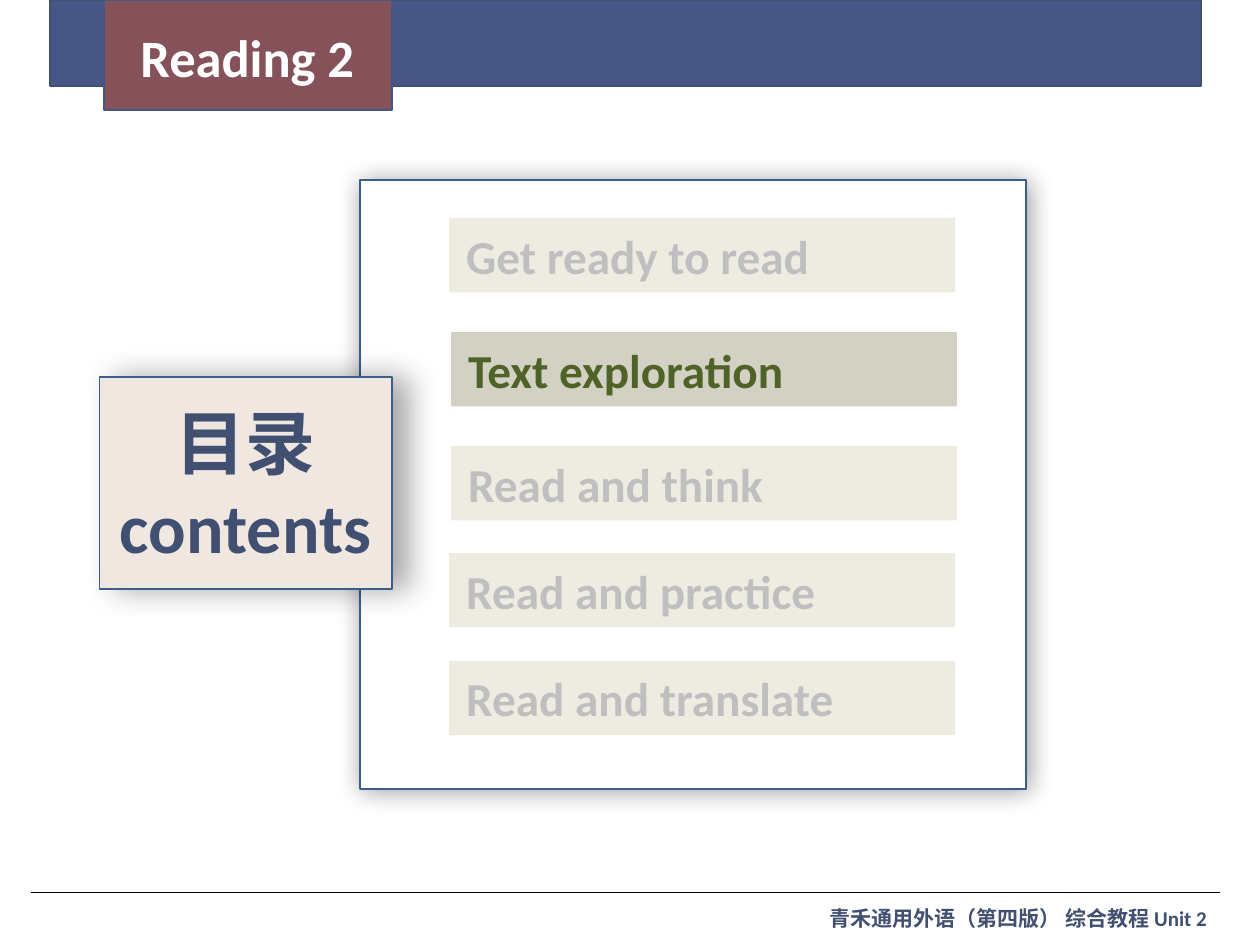
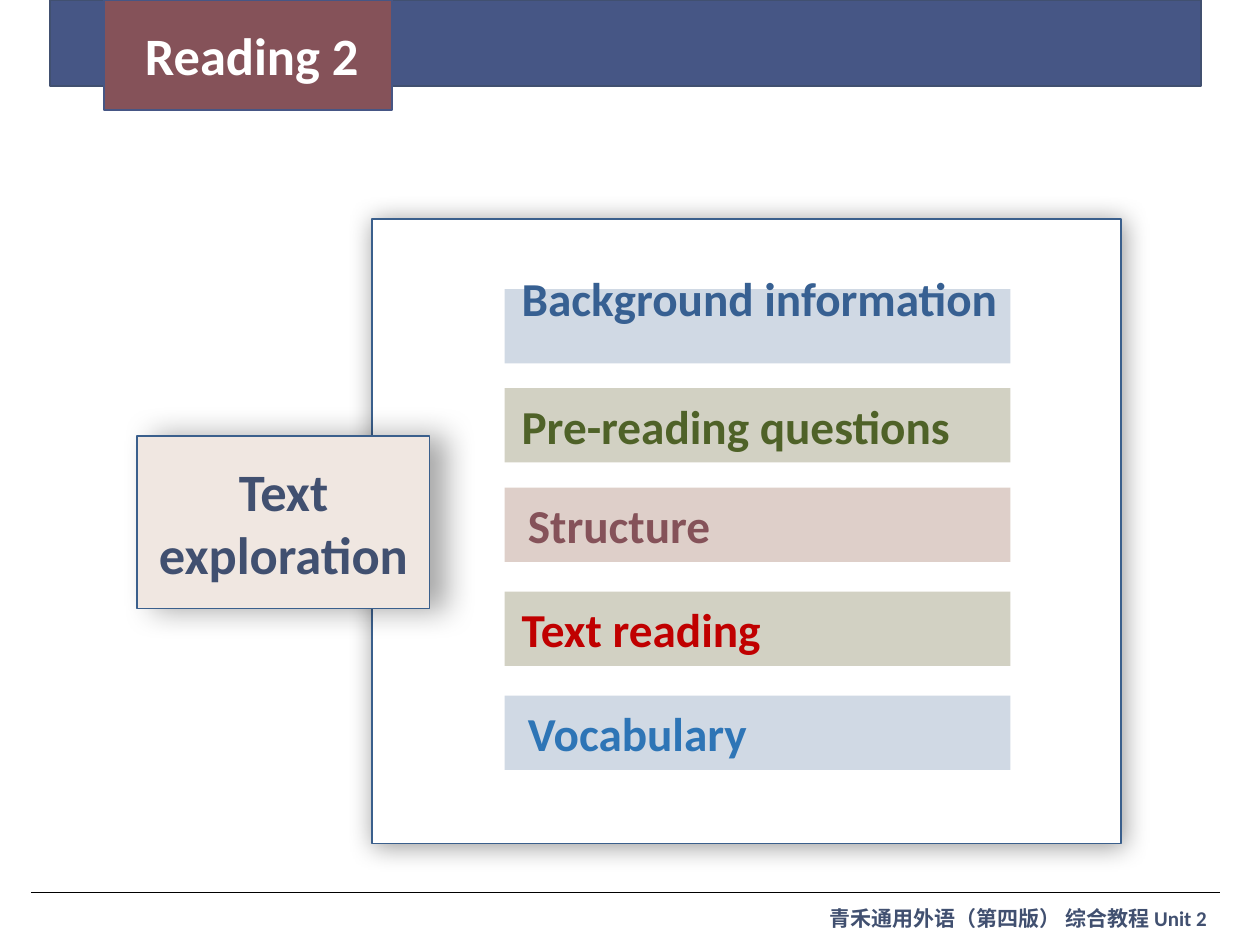
import pptx
import pptx.util
import pptx.dml.color
import pptx.enum.shapes
import pptx.enum.text
import pptx.oxml
import pptx.oxml.ns
from lxml import etree

Inches = pptx.util.Inches
Pt = pptx.util.Pt
ANCHOR = pptx.enum.text.MSO_ANCHOR
ALIGN = pptx.enum.text.PP_ALIGN

COLORS = {
    "navy": "465685", "ink": "415070", "maroon": "855259", "white": "FFFFFF",
    "black": "000000", "frame": "3A5F8C", "cream": "F0E7E1",
    "ivory": "EEECE1", "gray": "BFBFBF", "sage": "D2D1C3", "green": "4F6228",
    "rose": "DECFC9", "mist": "D0D9E4", "blue": "376092", "sky": "2E75B6",
    "red": "C00000",
}
LATIN, CHINESE = "Calibri", "Noto Sans CJK SC"
TITLE = "Reading 2"
FOOTER = [("青禾通用外语（第四版） 综合教程 ", "Arial"), ("Unit 2", LATIN)]
BAR_SIZE = (8.03, 1.18)
TEXT_INDENT = 0.27
WIDE_INDENT = 0.37
PANEL_SHADOW = {"alpha": 40, "blur": 29, "distance": 3, "angle": 45}
LABEL_SHADOW = {"alpha": 34, "blur": 35, "distance": 18, "angle": 0}

SLIDES = [
    {
        "title_at": (2.13, 0.35),
        "panel": (5.72, 2.86, 10.57, 9.66),
        "label_box": (1.58, 5.99, 4.64, 3.36),
        "label": [("目录", CHINESE), ("contents", LATIN)],
        "label_size": 80,
        "bars": [
            ("Get ready to read", 7.13, 3.46, "ivory", "gray", TEXT_INDENT, 0.05),
            ("Text exploration", 7.16, 5.27, "sage", "green", TEXT_INDENT, 0.05),
            ("Read and think", 7.16, 7.08, "ivory", "gray", TEXT_INDENT, 0.05),
            ("Read and practice", 7.13, 8.78, "ivory", "gray", TEXT_INDENT, 0.05),
            ("Read and translate", 7.13, 10.49, "ivory", "gray", TEXT_INDENT, 0.05),
        ],
    },
    {
        "title_at": (2.2, 0.32),
        "panel": (5.91, 3.48, 11.89, 9.91),
        "label_box": (2.18, 6.92, 4.64, 2.74),
        "label": [("Text exploration", LATIN)],
        "label_size": 60,
        "bars": [
            ("Background information", 8.01, 4.59, "mist", "blue", TEXT_INDENT, 0.95),
            ("Pre-reading questions", 8.01, 6.16, "sage", "green", TEXT_INDENT, 0.05),
            ("Structure", 8.01, 7.74, "rose", "maroon", WIDE_INDENT, 0.05),
            ("Text reading", 8.01, 9.39, "sage", "red", TEXT_INDENT, 0.05),
            ("Vocabulary", 8.01, 11.04, "mist", "sky", WIDE_INDENT, 0.05),
        ],
    },
]


def rgb(name):
    return pptx.dml.color.RGBColor.from_string(COLORS[name])


def style_font(font, size, color, name):
    font.size, font.bold, font.name = Pt(size), True, name
    font.color.rgb = rgb(color)


def set_insets(frame, left, top, right, bottom):
    frame.margin_left, frame.margin_top = Inches(left), Inches(top)
    frame.margin_right, frame.margin_bottom = Inches(right), Inches(bottom)


def add_box(slide, box, fill, line=None):
    shape = slide.shapes.add_shape(
        pptx.enum.shapes.MSO_SHAPE.RECTANGLE, *map(Inches, box))
    shape.shadow.inherit = False
    shape.fill.solid()
    shape.fill.fore_color.rgb = rgb(fill)
    if line:
        shape.line.color.rgb = rgb(line)
        shape.line.width = Pt(2)
    else:
        shape.line.fill.background()
    shape.text_frame.word_wrap = True
    shape.text_frame.vertical_anchor = ANCHOR.MIDDLE
    return shape


def add_shadow(shape, alpha, blur, distance, angle):
    effects = shape._element.spPr.find(pptx.oxml.ns.qn("a:effectLst"))
    shadow = etree.SubElement(
        effects, pptx.oxml.ns.qn("a:outerShdw"), blurRad=str(Pt(blur)),
        dist=str(Pt(distance)), dir=str(angle * 60000), rotWithShape="0")
    color = etree.SubElement(
        shadow, pptx.oxml.ns.qn("a:srgbClr"), val=COLORS["black"])
    etree.SubElement(color, pptx.oxml.ns.qn("a:alpha"), val=str(alpha * 1000))


def add_shared_parts(slide, layout):
    footer = slide.shapes.add_textbox(
        Inches(13.07), Inches(14.32), Inches(6.93), Inches(0.5))
    footer.text_frame.word_wrap = False
    paragraph = footer.text_frame.paragraphs[0]
    for text, font_name in FOOTER:
        run = paragraph.add_run()
        run.text = text
        style_font(run.font, 24, "ink", font_name)

    rule = slide.shapes.add_connector(
        pptx.enum.shapes.MSO_CONNECTOR.STRAIGHT,
        Inches(0.49), Inches(14.17), Inches(19.36), Inches(14.17))
    rule.line.color.rgb = rgb("black")
    rule.line.width = Pt(0.75)
    etree.SubElement(rule._element.spPr, pptx.oxml.ns.qn("a:effectLst"))

    band = add_box(slide, (0.79, 0, 18.27, 1.36), "navy", "ink")
    ribbon = add_box(slide, (1.65, 0, 4.57, 1.75), "maroon", "navy")
    for shape in (footer, rule, band, ribbon):
        layout.shapes._spTree.append(shape._element)


def place_title(slide, left, top):
    title = slide.shapes.title
    title.left, title.top = Inches(left), Inches(top)
    title.width, title.height = Inches(4.57), Inches(1.11)
    frame = title.text_frame
    frame.text = TITLE
    frame.auto_size = pptx.enum.text.MSO_AUTO_SIZE.NONE
    frame.vertical_anchor = ANCHOR.TOP
    set_insets(frame, 0.1, 0.05, 0.1, 0.05)
    paragraph = frame.paragraphs[0]
    paragraph.alignment = ALIGN.LEFT
    style_font(paragraph.font, 60, "white", LATIN)


def add_label(slide, box, lines, size):
    label = add_box(slide, box, "cream", "frame")
    add_shadow(label, **LABEL_SHADOW)
    frame = label.text_frame
    frame.text = "\n".join(text for text, font_name in lines)
    for paragraph, (text, font_name) in zip(frame.paragraphs, lines):
        paragraph.alignment = ALIGN.CENTER
        style_font(paragraph.font, size, "ink", font_name)


def add_bar(slide, text, left, top, fill, color, indent, bottom_inset):
    bar = add_box(slide, (left, top, *BAR_SIZE), fill)
    frame = bar.text_frame
    set_insets(frame, indent, 0.05, 0.1, bottom_inset)
    frame.text = text
    paragraph = frame.paragraphs[0]
    paragraph.alignment = ALIGN.LEFT
    style_font(paragraph.font, 54, color, LATIN)


def main():
    presentation = pptx.Presentation()
    presentation.slide_width, presentation.slide_height = Inches(20), Inches(15)
    layout = presentation.slide_layouts.get_by_name("Title Only")
    for number, content in enumerate(SLIDES):
        slide = presentation.slides.add_slide(layout)
        if number == 0:
            add_shared_parts(slide, layout)
        place_title(slide, *content["title_at"])
        panel = add_box(slide, content["panel"], "white", "frame")
        add_shadow(panel, **PANEL_SHADOW)
        add_label(slide, content["label_box"], content["label"], content["label_size"])
        for bar in content["bars"]:
            add_bar(slide, *bar)
    presentation.save("out.pptx")


if __name__ == "__main__":
    main()
